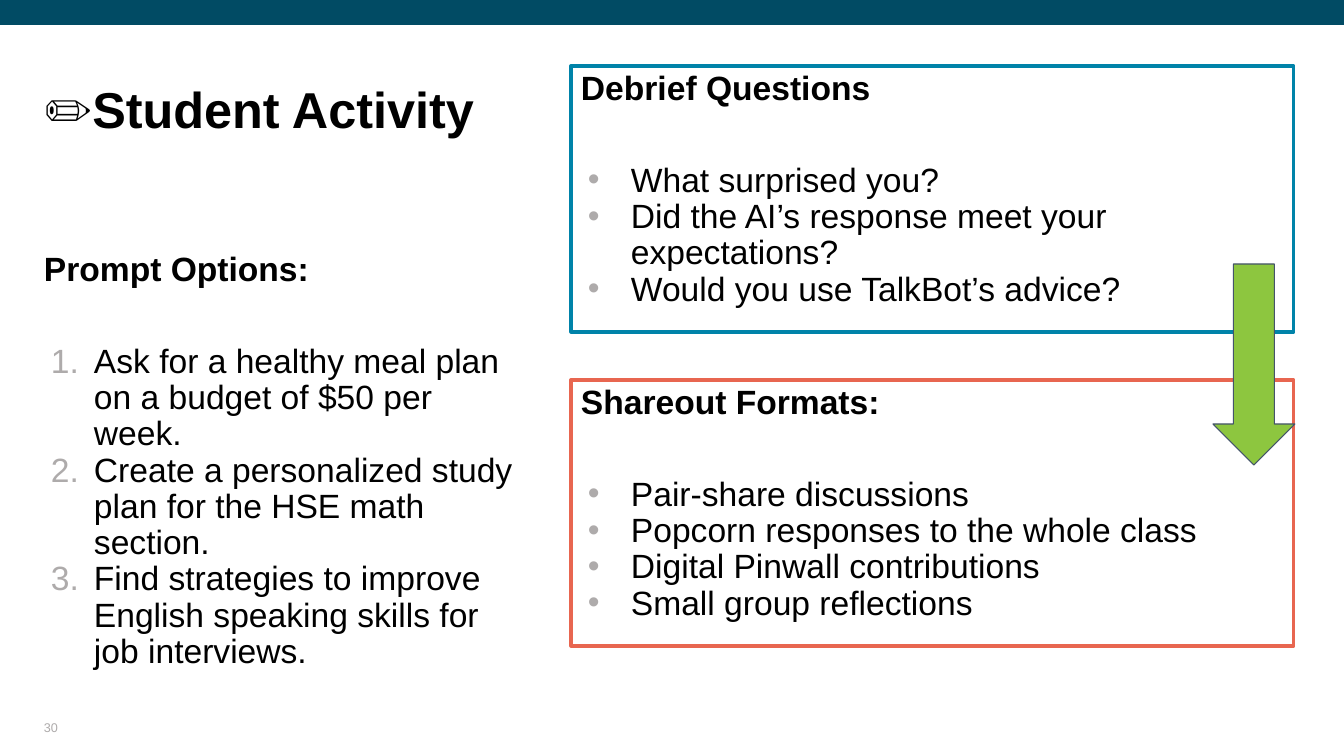
from lxml.etree import SubElement
from pptx import Presentation
from pptx.dml.color import RGBColor
from pptx.enum.shapes import MSO_SHAPE as Preset
from pptx.enum.text import MSO_ANCHOR as Anchor, MSO_AUTO_SIZE as AutoSize, PP_ALIGN as Align
from pptx.oxml.ns import qn
from pptx.util import Emu, Pt

BLACK = RGBColor(0x00, 0x00, 0x00)
GRAY = RGBColor(0xAE, 0xAB, 0xAB)
NAVY = RGBColor(0x01, 0x4B, 0x64)
TEAL = RGBColor(0x00, 0x83, 0xA9)
CORAL = RGBColor(0xE8, 0x66, 0x50)
GREEN = RGBColor(0x8D, 0xC6, 0x3F)
SLATE = RGBColor(0x44, 0x54, 0x6A)

TITLE = "✏️Student Activity"
PAGE_NUMBER = "30"
PROMPTS = ("Prompt Options:", [
    "Ask for a healthy meal plan on a budget of $50 per week.",
    "Create a personalized study plan for the HSE math section.",
    "Find strategies to improve English speaking skills for job interviews.",
])
PANELS = [
    (TEAL, "Debrief Questions", [
        "What surprised you?",
        "Did the AI’s response meet your expectations?",
        "Would you use TalkBot’s advice?",
    ]),
    (CORAL, "Shareout Formats:", [
        "Pair-share discussions",
        "Popcorn responses to the whole class",
        "Digital Pinwall contributions",
        "Small group reflections",
    ]),
]

WIDTH, HEIGHT = 1344, 756
LEFT, COLUMN = 44, 482
PANEL_LEFT, PANEL_TOP, PANEL_WIDTH, PANEL_HEIGHT, PANEL_STEP = 571, 66, 723, 266, 314
INDENT, HANGING = 50, 43
LIST_GAP = 40


def px(length):
    """Turn pixels into EMU."""
    return Emu(round(length * 914400 / 100.8))


def add_marker(paragraph, numbered):
    """Give a paragraph a hanging gray bullet or number."""
    props = paragraph._p.get_or_add_pPr()
    props.set("marL", str(px(INDENT)))
    props.set("indent", str(-px(HANGING)))
    SubElement(SubElement(props, qn("a:buClr")), qn("a:srgbClr")).set("val", str(GRAY))
    SubElement(props, qn("a:buFont")).set("typeface", "Arial")
    if numbered:
        SubElement(props, qn("a:buAutoNum")).set("type", "arabicPeriod")
    else:
        SubElement(props, qn("a:buChar")).set("char", "•")


def write(frame, text, items=(), size=24, bold=True, color=BLACK, spacing=0.9,
          anchor=Anchor.TOP, margins=(0, 0, 0, 0), numbered=False):
    """Fill a text frame with a heading and an optional list."""
    frame.word_wrap = True
    frame.auto_size = AutoSize.NONE
    frame.vertical_anchor = anchor
    (frame.margin_left, frame.margin_top,
     frame.margin_right, frame.margin_bottom) = map(px, margins)
    for index, line in enumerate([text, *items]):
        paragraph = frame.add_paragraph() if index else frame.paragraphs[0]
        if index:
            add_marker(paragraph, numbered)
        paragraph.text = line
        paragraph.alignment = Align.LEFT
        paragraph.line_spacing = spacing
        paragraph.space_before = Pt(LIST_GAP if index == 1 else 0)
        font = paragraph.font
        font.name, font.size, font.color.rgb = "Arial", Pt(size), color
        font.bold = bold and index == 0


def add_preset(slide, preset, box, fill=None, line=None, weight=0.75):
    """Add a flat preset shape."""
    shape = slide.shapes.add_shape(preset, *map(px, box))
    shape.shadow.inherit = False
    if fill is None:
        shape.fill.background()
    else:
        shape.fill.solid()
        shape.fill.fore_color.rgb = fill
    if line is None:
        shape.line.fill.background()
    else:
        shape.line.color.rgb = line
        shape.line.width = Pt(weight)
    return shape


def main():
    """Build the student activity slide."""
    deck = Presentation()
    deck.slide_width, deck.slide_height = px(WIDTH), px(HEIGHT)
    slide = deck.slides.add_slide(deck.slide_layouts[5])

    add_preset(slide, Preset.RECTANGLE, (0, 0, WIDTH, 25), fill=NAVY)

    title = slide.shapes.title
    title.left, title.top, title.width, title.height = map(px, (LEFT, 50, COLUMN, 89))
    write(title.text_frame, TITLE, size=36, anchor=Anchor.BOTTOM)

    prompts = slide.shapes.add_textbox(*map(px, (LEFT, 242, COLUMN, 405)))
    write(prompts.text_frame, *PROMPTS, margins=(0, 10, 0, 0), numbered=True)

    for row, (outline, heading, items) in enumerate(PANELS):
        box = (PANEL_LEFT, PANEL_TOP + row * PANEL_STEP, PANEL_WIDTH, PANEL_HEIGHT)
        panel = add_preset(slide, Preset.RECTANGLE, box, line=outline, weight=2.25)
        write(panel.text_frame, heading, items, margins=(10, 5, 10, 5))

    page_number = slide.shapes.add_textbox(*map(px, (LEFT, 711, 302, 24)))
    write(page_number.text_frame, PAGE_NUMBER, size=9, bold=False, color=GRAY,
          spacing=1.0, anchor=Anchor.BOTTOM)

    add_preset(slide, Preset.DOWN_ARROW, (1213, 264, 82, 201), fill=GREEN, line=SLATE)
    deck.save("out.pptx")


if __name__ == "__main__":
    main()
